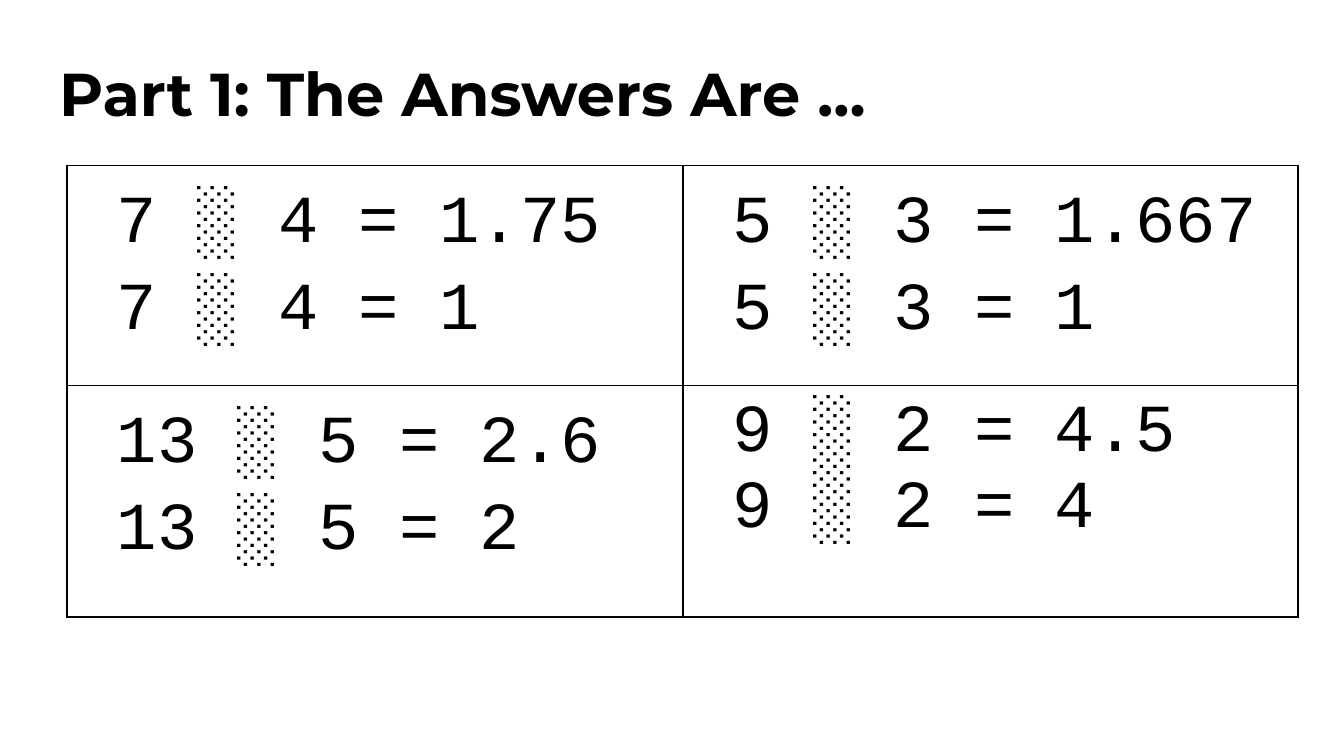
from lxml import etree
from pptx import Presentation
from pptx.dml.color import RGBColor
from pptx.enum import text
from pptx.oxml import ns
from pptx.util import Inches, Pt

BLACK = "000000"
# Each cell: its two equations and the line spacing
ANSWERS = [
    [((" 7 ░ 4 = 1.75", " 7 ░ 4 = 1"), 1.15),
     ((" 5 ░ 3 = 1.667", " 5 ░ 3 = 1"), 1.15)],
    [((" 13 ░ 5 = 2.6", " 13 ░ 5 = 2"), 1.15),
     ((" 9 ░ 2 = 4.5", " 9 ░ 2 = 4"), 1.0)],
]
ROW_HEIGHTS = (1.64, 1.72)
COL_WIDTH = 4.58


def color(value):
    return RGBColor.from_string(value)


def add_run(p, content, font, size, bold=False):
    r = p.add_run()
    r.text = content
    r.font.name = font
    r.font.size = Pt(size)
    r.font.bold = bold
    r.font.color.rgb = color(BLACK)


def set_margins(frame, margin):
    frame.margin_left = frame.margin_right = Inches(margin)
    frame.margin_top = frame.margin_bottom = Inches(margin)


def set_borders(cell, value, width):
    tcPr = cell._tc.get_or_add_tcPr()
    for i, side in enumerate(("lnL", "lnR", "lnT", "lnB")):
        ln = etree.Element(ns.qn(f"a:{side}"), w=str(Pt(width)))
        fill = etree.SubElement(ln, ns.qn("a:solidFill"))
        etree.SubElement(fill, ns.qn("a:srgbClr"), val=value)
        tcPr.insert(i, ln)  # borders come before the fill


def add_title(s, content):
    sp = s.shapes.title
    sp.left, sp.top = Inches(0.34), Inches(0.32)
    sp.width, sp.height = Inches(9.32), Inches(0.68)
    tf = sp.text_frame
    tf.word_wrap = True
    tf.auto_size = text.MSO_AUTO_SIZE.NONE
    tf.vertical_anchor = text.MSO_ANCHOR.TOP
    set_margins(tf, 0.1)
    p = tf.paragraphs[0]
    p.alignment = text.PP_ALIGN.LEFT
    p.line_spacing = 1.0
    add_run(p, content, "Montserrat", 32.4, bold=True)


def fill_cell(cell, equations, spacing):
    cell.fill.background()
    set_borders(cell, BLACK, 1)
    set_margins(cell, 0.07)
    tf = cell.text_frame
    for i, equation in enumerate(equations):
        p = tf.add_paragraph() if i else tf.paragraphs[0]
        p.line_spacing = spacing
        add_run(p, equation, "Courier New", 36)


def add_answers(s):
    cols = len(ANSWERS[0])
    table = s.shapes.add_table(
        len(ANSWERS), cols, Inches(0.5), Inches(1.23),
        Inches(COL_WIDTH * cols), Inches(sum(ROW_HEIGHTS))).table
    table.first_row = table.horz_banding = False
    for column in table.columns:
        column.width = Inches(COL_WIDTH)
    for i, (height, answers) in enumerate(zip(ROW_HEIGHTS, ANSWERS)):
        table.rows[i].height = Inches(height)
        for j, (equations, spacing) in enumerate(answers):
            fill_cell(table.cell(i, j), equations, spacing)


def main():
    prs = Presentation()
    # Widescreen, 16:9
    prs.slide_width, prs.slide_height = Inches(10), Inches(10 * 9 / 16)
    s = prs.slides.add_slide(prs.slide_layouts[5])
    add_title(s, "Part 1: The Answers Are …")
    add_answers(s)
    prs.save("out.pptx")


if __name__ == "__main__":
    main()
